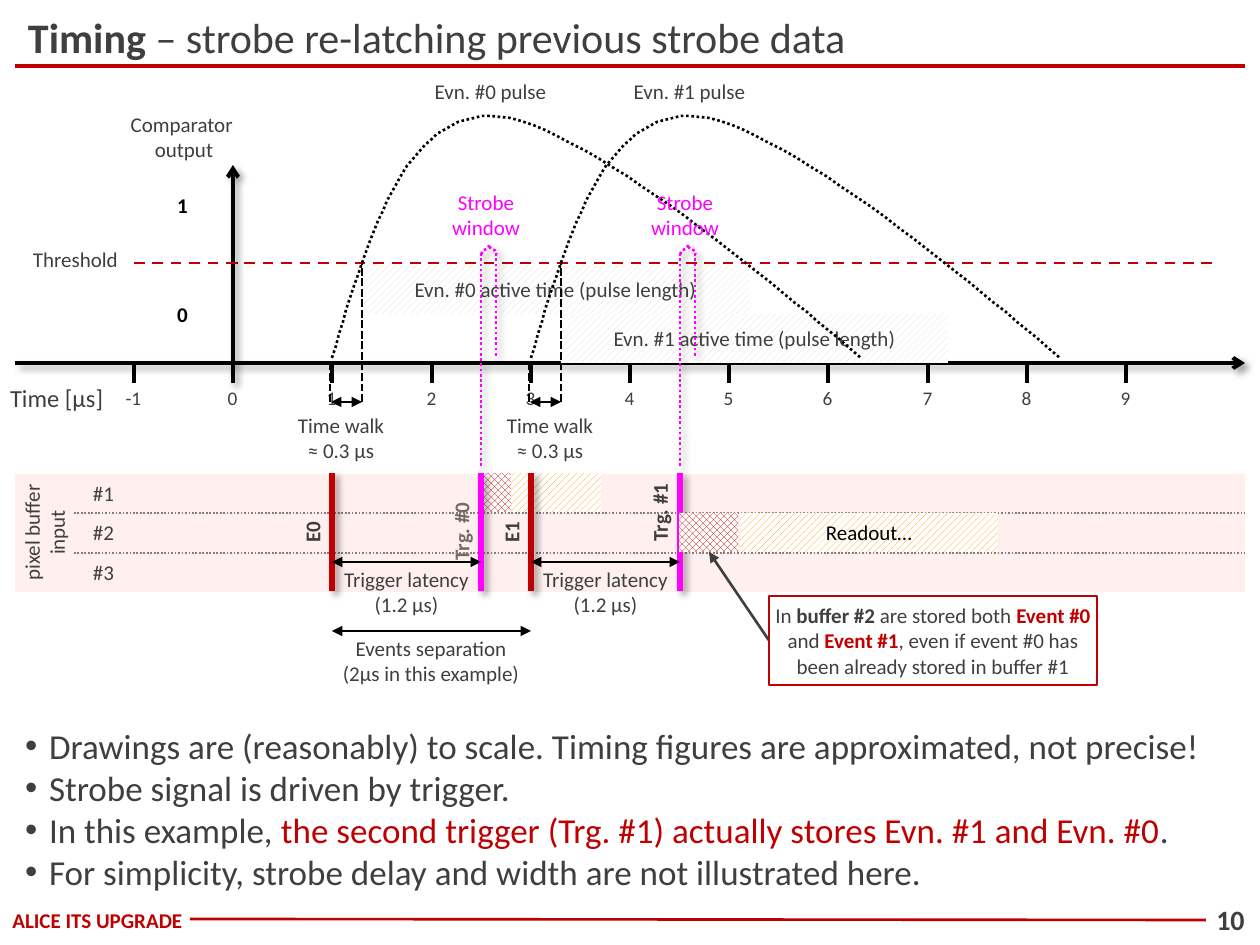
from dataclasses import dataclass

from lxml import etree
from pptx import Presentation
from pptx.dml.color import RGBColor
from pptx.enum.dml import MSO_LINE, MSO_PATTERN
from pptx.enum.shapes import MSO_CONNECTOR, MSO_SHAPE
from pptx.enum.text import MSO_ANCHOR, MSO_AUTO_SIZE, PP_ALIGN
from pptx.oxml.ns import qn
from pptx.util import Pt

EMU_PER_PX = 914400 / 126
DOT, SHORT_DASH, DASH = MSO_LINE.ROUND_DOT, MSO_LINE.SQUARE_DOT, MSO_LINE.DASH
STRIPES, CHECKS = MSO_PATTERN.WIDE_UPWARD_DIAGONAL, MSO_PATTERN.LARGE_CHECKER_BOARD
LEFT, CENTER = PP_ALIGN.LEFT, PP_ALIGN.CENTER
TOP, MIDDLE = MSO_ANCHOR.TOP, MSO_ANCHOR.MIDDLE
RECTANGLE, BRACE = MSO_SHAPE.RECTANGLE, MSO_SHAPE.LEFT_BRACE
BOTH_ENDS = ("triangle", "triangle")
AXIS_Y, THRESHOLD_Y, BAND_TOP, BAND_BOTTOM = 363, 263, 474, 592
LEFT_EDGE, RIGHT_EDGE = 15, 1245


@dataclass(frozen=True)
class Theme:
    font: str = "Calibri"
    ink: RGBColor = RGBColor(0x3F, 0x3F, 0x3F)
    black: RGBColor = RGBColor(0, 0, 0)
    white: RGBColor = RGBColor(255, 255, 255)
    red: RGBColor = RGBColor(0xC0, 0, 0)
    magenta: RGBColor = RGBColor(255, 0, 255)
    orange: RGBColor = RGBColor(255, 0x99, 0)
    pink: RGBColor = RGBColor(255, 0xCC, 0xCC)
    grey: RGBColor = RGBColor(0x80, 0x80, 0x80)
    pale: RGBColor = RGBColor(0xDD, 0xDD, 0xDD)
    title: int = 24
    body: int = 20
    page_number: int = 16
    axis: int = 14
    label: int = 12
    tick: int = 11


THEME = Theme()


def px(value):
    return round(value * EMU_PER_PX)


def time_x(microseconds):
    return round(233 + 99.25 * microseconds)


def run(text, color=THEME.ink, bold=False):
    return text, color, bold


def set_effects(shape, shadow):
    effects = etree.SubElement(shape.element.spPr, qn("a:effectLst"))
    if shadow:
        outer = etree.SubElement(effects, qn("a:outerShdw"), blurRad=str(Pt(4)),
                                 dist=str(Pt(3)), dir="2700000", algn="tl", rotWithShape="0")
        color = etree.SubElement(outer, qn("a:srgbClr"), val="000000")
        etree.SubElement(color, qn("a:alpha"), val="40000")


def style_line(line, color, weight, dash=None):
    line.color.rgb = color
    line.width = Pt(weight)
    if dash:
        line.dash_style = dash


def add_line(page, start, end, color=THEME.black, weight=1.5, dash=None,
             heads=(None, None), shadow=False):
    line = page.shapes.add_connector(MSO_CONNECTOR.STRAIGHT, *map(px, start + end))
    style_line(line.line, color, weight, dash)
    for tag, head in zip(("a:headEnd", "a:tailEnd"), heads):
        if head:
            etree.SubElement(line.line._get_or_add_ln(), qn(tag), type=head)
    set_effects(line, shadow)
    return line


def write(shape, paragraphs, size=THEME.label, align=CENTER, anchor=MIDDLE, wrap=True, inset=(5, 5)):
    """Fill a shape with paragraphs, each a list of runs."""
    frame = shape.text_frame
    frame.auto_size = MSO_AUTO_SIZE.NONE
    frame.word_wrap = wrap
    frame.vertical_anchor = anchor
    frame.margin_left = frame.margin_right = px(inset[0])
    frame.margin_top = frame.margin_bottom = px(inset[1])
    for index, runs in enumerate(paragraphs):
        para = frame.add_paragraph() if index else frame.paragraphs[0]
        para.alignment = align
        para.space_before = Pt(0)
        for text, color, bold in runs:
            span = para.add_run()
            span.text = text
            span.font.name, span.font.size = THEME.font, Pt(size)
            span.font.color.rgb, span.font.bold = color, bold


def add_label(page, area, *lines, color=THEME.ink, bold=False, rotation=0, **layout):
    box = page.shapes.add_textbox(*map(px, area))
    box.rotation = rotation
    write(box, [[run(line, color, bold)] for line in lines], **layout)


def add_block(page, area, kind=RECTANGLE, shadow=False):
    block = page.shapes.add_shape(kind, *map(px, area))
    block.fill.background()
    block.line.fill.background()
    set_effects(block, shadow)
    return block


def add_hatch(page, area, pattern, color, text="", text_color=THEME.ink):
    block = add_block(page, area)
    block.fill.patterned()
    block.fill.pattern = pattern
    block.fill.fore_color.rgb, block.fill.back_color.rgb = color, THEME.white
    if text:
        write(block, [[run(text, text_color)]])


def place(shape, area):
    shape.left, shape.top, shape.width, shape.height = map(px, area)


def bezier(points, steps=30):
    """Points along a cubic curve, without its start."""
    for step in range(1, steps + 1):
        t = step / steps
        weights = ((1 - t) ** 3, 3 * t * (1 - t) ** 2, 3 * t * t * (1 - t), t ** 3)
        yield tuple(sum(w * p[axis] for w, p in zip(weights, points)) for axis in (0, 1))


def add_pulse(page, onset):
    start, peak = (onset, 358), (onset + 159, 116)
    rise = (start, (onset + 36, 237), (onset + 71, 116), peak)
    decay = (peak, (onset + 247, 116), (onset + 467, 305), (onset + 529, 358))
    builder = page.shapes.build_freeform(*start, scale=EMU_PER_PX)
    builder.add_line_segments([*bezier(rise), *bezier(decay)], close=False)
    pulse = builder.convert_to_shape()
    pulse.fill.background()
    style_line(pulse.line, THEME.black, 1.5, DOT)
    set_effects(pulse, False)


def add_bar(page, x, color):
    add_line(page, (x, 473), (x, 591), color, 3, shadow=True)


def add_frame(page):
    add_line(page, (LEFT_EDGE, 66), (RIGHT_EDGE, 66), THEME.red, 2.25)
    add_label(page, (3, 910, 189, 20), "ALICE ITS UPGRADE", color=THEME.red, bold=True, inset=(0, 0))
    add_line(page, (1206, 920), (190, 919), THEME.red)
    add_label(page, (1206, 900, 49, 39), "10", bold=True, size=THEME.page_number, wrap=False)
    place(page.shapes.title, (15, 6, 1230, 59))
    write(page.shapes.title, [[run("Timing ", bold=True), run("– strobe re-latching previous strobe data")]],
          size=THEME.title, align=LEFT, anchor=TOP, inset=(13, 5))


def add_notes_list(page):
    body = page.placeholders[1]
    place(body, (15, 719, 1230, 180))
    write(body, [
        [run("Drawings are (reasonably) to scale. Timing figures are approximated, not precise!")],
        [run("Strobe signal is driven by trigger.")],
        [run("In this example, "),
         run("the second trigger (Trg. #1) actually stores Evn. #1 and Evn. #0", THEME.red), run(".")],
        [run("For simplicity, strobe delay and width are not illustrated here.")],
    ], size=THEME.body, align=LEFT, anchor=TOP, inset=(10, 5))
    for para in body.text_frame.paragraphs:
        properties = para._p.get_or_add_pPr()
        properties.set("marL", str(px(24)))
        properties.set("indent", str(px(-24)))


def add_buffers(page):
    add_label(page, (402, 512, 118, 39), "Trg. #0", bold=True, rotation=270, wrap=False)
    band = add_block(page, (LEFT_EDGE, BAND_TOP, 1230, BAND_BOTTOM - BAND_TOP))
    band.fill.solid()
    band.fill.fore_color.rgb = THEME.pink
    etree.SubElement(band.element.spPr.find(".//" + qn("a:srgbClr")), qn("a:alpha"), val="30000")
    add_label(page, (-15, 503, 118, 59), "pixel buffer input", rotation=270)
    for row in range(3):
        top = BAND_TOP + round(39.33 * row)
        add_label(page, (74, top, 59, 39), f"#{row + 1}")
        if row:
            add_line(page, (74, top), (RIGHT_EDGE, top), THEME.grey, 1, DOT)
    add_hatch(page, (501, 473, 100, 39), STRIPES, THEME.orange)
    add_hatch(page, (481, 473, 30, 39), CHECKS, THEME.red)


def add_axes(page):
    add_line(page, (LEFT_EDGE, AXIS_Y), (RIGHT_EDGE, AXIS_Y), weight=2.25, heads=(None, "arrow"), shadow=True)
    add_label(page, (5, 383, 110, 30), "Time [µs]", size=THEME.axis, align=LEFT)
    for tick in range(-1, 10):
        x = time_x(tick)
        add_line(page, (x, 383), (x, AXIS_Y), weight=2.25)
        add_label(page, (x - 20, 383, 39, 30), str(tick), size=THEME.tick)
    for event, top in ((1, 314), (0, 265)):
        add_hatch(page, (time_x(1.3 + 2 * event), top, 387, 49), STRIPES, THEME.pale,
                  f"Evn. #{event} active time (pulse length)")
    add_line(page, (233, 383), (233, 165), weight=2.25, heads=(None, "arrow"), shadow=True)
    add_label(page, (125, 106, 118, 59), "Comparator ", "output", anchor=TOP)
    for level, top in (("1", 186), ("0", 295)):
        add_label(page, (164, top, 37, 38), level, color=THEME.black, bold=True, wrap=False)
    add_line(page, (228, THRESHOLD_Y), (238, THRESHOLD_Y), weight=0.75)
    add_line(page, (134, THRESHOLD_Y), (1216, THRESHOLD_Y), THEME.red, dash=DASH)
    add_label(page, (28, 244, 96, 30), "Threshold", align=LEFT)


def add_event(page, event, walk_label_x):
    onset, crossing = time_x(1 + 2 * event), time_x(1.3 + 2 * event)
    strobe = time_x(2.5 + 2 * event)
    add_bar(page, onset, THEME.red)
    add_label(page, (onset - 79, 513, 118, 39), f"E{event}", bold=True, rotation=270, wrap=False)
    add_pulse(page, onset)
    add_label(page, (onset + 89, 76, 139, 30), f"Evn. #{event} pulse")
    add_line(page, (onset - 2, 402), (onset - 2, AXIS_Y), dash=SHORT_DASH)
    add_line(page, (crossing, 402), (crossing, THRESHOLD_Y), dash=SHORT_DASH)
    add_line(page, (onset - 1, 402), (crossing, 402), heads=BOTH_ENDS)
    add_label(page, (walk_label_x, 408, 118, 59), "Time walk", "≈ 0.3 µs")
    add_bar(page, strobe, THEME.magenta)
    add_line(page, (onset, 562), (strobe, 562), heads=BOTH_ENDS)
    add_label(page, (onset, 562, 149, 59), "Trigger latency (1.2 µs)")
    for x, bottom in ((strobe + 15, 358), (strobe, 467)):
        add_line(page, (x, 253), (x, bottom), THEME.magenta, dash=DOT, shadow=True)
    brace = add_block(page, (strobe + 3, 242, 10, 15), BRACE, shadow=True)
    brace.rotation = 90
    brace.adjustments[0] = 0.37
    style_line(brace.line, THEME.magenta, 1.5, DOT)
    add_label(page, (strobe - 50, 185, 110, 59), "Strobe window", color=THEME.magenta)


def add_callout(page):
    box = add_block(page, (769, 596, 328, 89))
    style_line(box.line, THEME.red, 1.5)
    write(box, [[run("In "), run("buffer #2", bold=True), run(" are stored both "),
                 run("Event #0 ", THEME.red, True), run("and "), run("Event #1", THEME.red, True),
                 run(", even if event #0 has been already stored in buffer #1")]])
    pointer = add_line(page, (769, 641), (709, 552), THEME.ink, heads=(None, "triangle"))
    pointer.begin_connect(box, 1)


def main():
    deck = Presentation()
    deck.slide_width, deck.slide_height = px(1260), px(945)
    page = deck.slides.add_slide(deck.slide_layouts[1])
    add_frame(page)
    add_buffers(page)
    add_axes(page)
    for event, walk_label_x in enumerate((282, 491)):
        add_event(page, event, walk_label_x)
    add_label(page, (620, 493, 79, 39), "Trg. #1", bold=True, rotation=270, wrap=False)
    add_line(page, (time_x(1), 631), (time_x(3), 631), heads=BOTH_ENDS)
    add_label(page, (332, 631, 198, 59), "Events separation (2µs in this example)")
    add_hatch(page, (740, 513, 258, 39), STRIPES, THEME.orange, "Readout…", THEME.black)
    add_hatch(page, (679, 513, 59, 39), CHECKS, THEME.red)
    add_callout(page)
    add_notes_list(page)
    deck.save("out.pptx")


if __name__ == "__main__":
    main()
